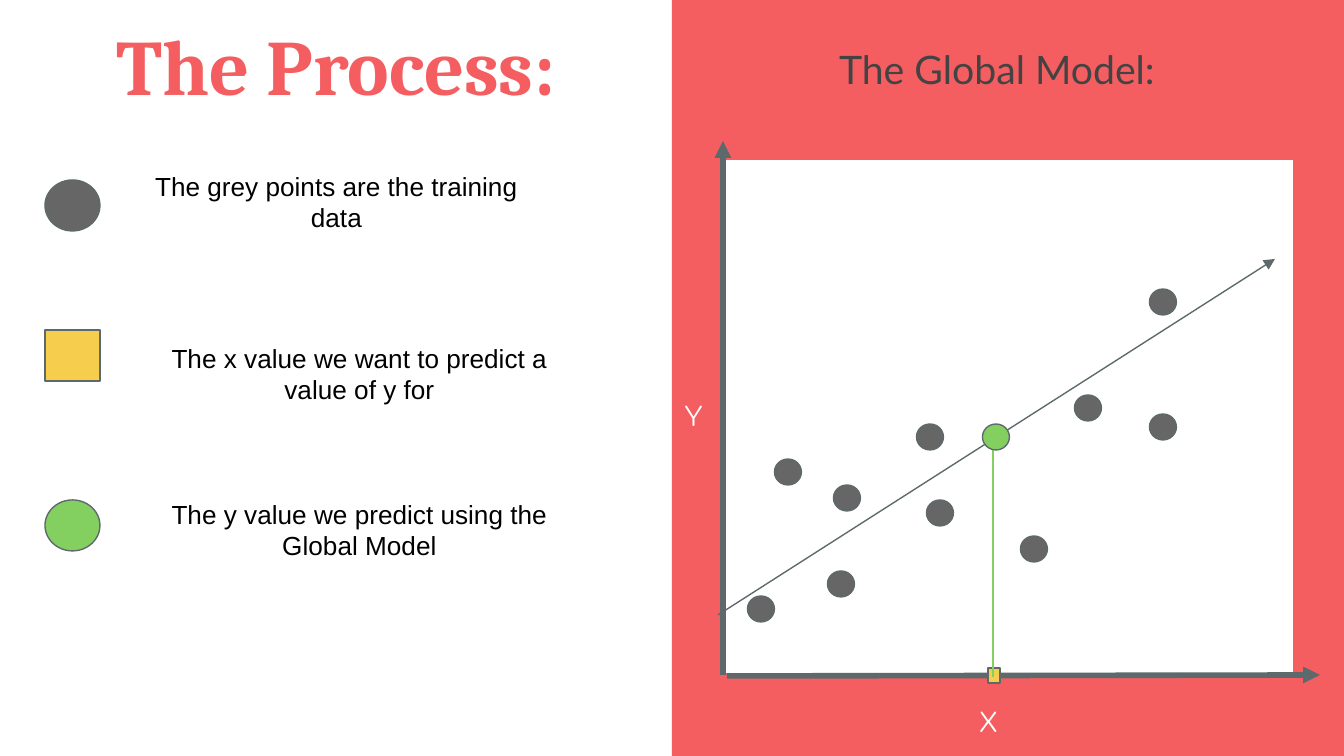
from lxml import etree
from pptx import Presentation
from pptx import util as u
from pptx.dml.color import RGBColor
from pptx.enum import shapes, text
from pptx.oxml import ns

PX = 914400 / 134.4
RED, WHITE, SLATE = "F55E61", "FFFFFF", "5E696C"
GREY, YELLOW, GREEN = "666666", "F6CD4C", "83D061"
OVAL, RECTANGLE = shapes.MSO_SHAPE.OVAL, shapes.MSO_SHAPE.RECTANGLE
TOP, MIDDLE, BOTTOM = (text.MSO_ANCHOR.TOP, text.MSO_ANCHOR.MIDDLE,
                       text.MSO_ANCHOR.BOTTOM)
LEFT, CENTER = text.PP_ALIGN.LEFT, text.PP_ALIGN.CENTER

# Legend: symbol, colour, symbol top, text left, text top, wording
LEGEND = [
    (OVAL, GREY, 180, 125, 157, "The grey points are the training data"),
    (RECTANGLE, YELLOW, 330, 148, 329,
     "The x value we want to predict a value of y for"),
    (OVAL, GREEN, 500, 148, 485,
     "The y value we predict using the Global Model"),
]
AXIS_LABELS = [("Y", 672, 387), ("X", 966, 693)]
AXES = [(727, 676, 1320, 675), (723, 675, 723, 141)]
TREND = (718, 615, 1275, 259)
# Centres of the points
TRAINING = [(761, 609), (788, 472), (841, 584), (847, 498), (940, 513),
            (930, 437), (1034, 549), (1088, 408), (1163, 427), (1163, 302)]
PREDICTED = (996, 437)
POINT_SIZE = (27, 26)

presentation = Presentation()
presentation.slide_width, presentation.slide_height = (
    u.Emu(round(side * PX)) for side in (1344, 756))
slide = presentation.slides.add_slide(presentation.slide_layouts[6])


def emu(*lengths):
    return [u.Emu(round(length * PX)) for length in lengths]


def color(value):
    return RGBColor.from_string(value)


def add_shape(kind, box, fill, outline=None):
    shape = slide.shapes.add_shape(kind, *emu(*box))
    shape.shadow.inherit = False
    shape.fill.solid()
    shape.fill.fore_color.rgb = color(fill)
    if outline:
        shape.line.color.rgb = color(outline)
        shape.line.width = u.Pt(0.75)
    else:
        shape.line.fill.background()


def add_point(center, fill):
    width, height = POINT_SIZE
    x, y = center
    add_shape(OVAL, (x - width / 2, y - height / 2, width, height), fill, SLATE)


def add_line(ends, stroke, width, arrow=False):
    line = slide.shapes.add_connector(shapes.MSO_CONNECTOR.STRAIGHT, *emu(*ends))
    line.line.color.rgb = color(stroke)
    line.line.width = u.Pt(width)
    if arrow:
        etree.SubElement(line.line._get_or_add_ln(), ns.qn("a:tailEnd"),
                         type="triangle")
    etree.SubElement(line._element.spPr, ns.qn("a:effectLst"))


def add_text(words, box, font, size, fill, align=CENTER, anchor=TOP, bold=False):
    frame = slide.shapes.add_textbox(*emu(*box)).text_frame
    frame.word_wrap = True
    frame.vertical_anchor = anchor
    frame.margin_left = frame.margin_right = u.Inches(0.1)
    frame.margin_top = frame.margin_bottom = u.Inches(0.1)
    paragraph = frame.paragraphs[0]
    paragraph.text = words
    paragraph.alignment = align
    paragraph.font.name = font
    paragraph.font.size = u.Pt(size)
    paragraph.font.bold = bold
    paragraph.font.color.rgb = color(fill)


# Right panel and headings
add_shape(RECTANGLE, (672, 0, 672, 756), RED)
add_text("The Process:", (71, 42, 530, 83), "Cambria", 42, RED,
         anchor=BOTTOM, bold=True)
add_text("The Global Model: ", (723, 27, 558, 83), "Lato", 21, "434343",
         anchor=MIDDLE)

# Plot area, axes and axis labels
add_shape(RECTANGLE, (723, 160, 570, 513), WHITE)
for axis in AXES:
    add_line(axis, SLATE, 3, arrow=True)
for label, left, top in AXIS_LABELS:
    add_text(label, (left, top, 55, 42), "Comfortaa", 14, WHITE, align=LEFT)

# Training data, model line and prediction
for center in TRAINING:
    add_point(center, GREY)
add_line(TREND, SLATE, 0.75, arrow=True)
add_shape(RECTANGLE, (988, 668, 12, 15), YELLOW, SLATE)
add_line((993, 439, 993, 677), GREEN, 1.5)
add_point(PREDICTED, GREEN)

# Legend
for kind, fill, top, text_left, text_top, words in LEGEND:
    add_shape(kind, (45, top, 55, 51), fill, SLATE)
    add_text(words, (text_left, text_top, 423, 97), "Arial", 14, "000000")

presentation.save("out.pptx")
